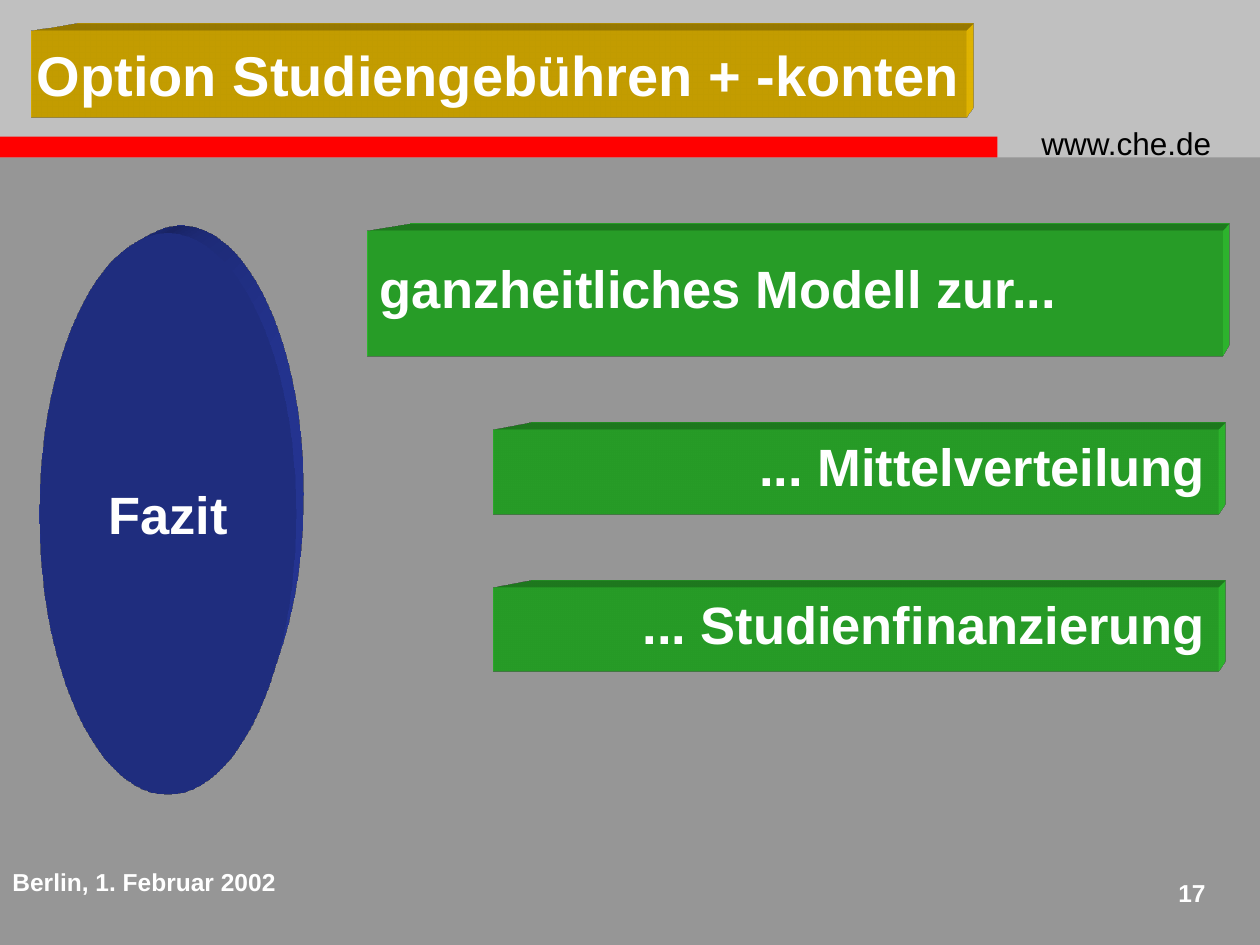
import pptx
import pptx.util
import pptx.oxml
import pptx.dml.color
import pptx.enum.shapes
import pptx.enum.text

Pt = pptx.util.Pt
Kind = pptx.enum.shapes.MSO_SHAPE
Side = pptx.enum.text.PP_ALIGN
Hold = pptx.enum.text.MSO_ANCHOR
NS = 'xmlns:a="http://schemas.openxmlformats.org/drawingml/2006/main"'


class Deck:
    """Build a slide on a grid of 120 columns and 90 rows."""

    font = "Arial"
    hues = {"back": "969696", "band": "C0C0C0", "red": "FF0000", "blue": "293BA5",
            "green": "33CC33", "gold": "FFCC00", "white": "FFFFFF", "black": "000000"}

    def __init__(self):
        self.show = pptx.Presentation()
        self.show.slide_width = pptx.util.Inches(10)
        self.show.slide_height = pptx.util.Inches(7.5)
        self.unit = self.show.slide_width / 120
        self.slide = self.show.slides.add_slide(self.show.slide_layouts[6])
        self.paint(self.slide.background.fill, "back")

    def hue(self, name):
        return pptx.dml.color.RGBColor.from_string(self.hues[name])

    def paint(self, fill, name):
        fill.solid()
        fill.fore_color.rgb = self.hue(name)

    def place(self, *cells):
        return [round(cell * self.unit) for cell in cells]

    def letter(self, shape, text, size, side=Side.LEFT, tone="white", bold=True):
        para = shape.text_frame.paragraphs[0]
        para.text = text
        para.alignment = side
        para.font.name = self.font
        para.font.size = Pt(size)
        para.font.bold = bold
        para.font.color.rgb = self.hue(tone)
        return para

    def shape(self, kind, area, name):
        shape = self.slide.shapes.add_shape(kind, *self.place(*area))
        shape.shadow.inherit = False
        shape.line.fill.background()
        self.paint(shape.fill, name)
        return shape

    def label(self, area, text, size, **look):
        box = self.slide.shapes.add_textbox(*self.place(*area))
        box.text_frame.word_wrap = True
        self.letter(box, text, size, **look)

    def block(self, kind, area, name, text, size, side=Side.CENTER, lead=None):
        shape = self.shape(kind, area, name)
        frame = shape.text_frame
        frame.word_wrap = False
        frame.vertical_anchor = Hold.MIDDLE
        self.letter(shape, text, size, side).line_spacing = lead
        for part in (
            f'<a:scene3d {NS}><a:camera prst="legacyPerspectiveTopRight"/>'
            '<a:lightRig rig="legacyFlat3" dir="b"/></a:scene3d>',
            f'<a:sp3d {NS} extrusionH="430200" prstMaterial="legacyMatte">'
            '<a:bevelT w="13500" h="13500" prst="angle"/>'
            '<a:bevelB w="13500" h="13500" prst="angle"/>'
            f'<a:extrusionClr><a:srgbClr val="{self.hues[name]}"/></a:extrusionClr></a:sp3d>',
        ):
            shape._element.spPr.append(pptx.oxml.parse_xml(part))

    def save(self):
        self.show.save("out.pptx")


def main():
    deck = Deck()
    deck.shape(Kind.RECTANGLE, (0, 0, 120, 15), "band")
    deck.shape(Kind.RECTANGLE, (0, 13, 95, 2), "red")
    deck.label((98, 11.25, 21, 4.8), "www.che.de", 18, tone="black", bold=False)
    deck.label((0, 82, 29, 6), "Berlin, 1. Februar 2002", 14)
    deck.label((109, 83, 7, 5), "17", 14, side=Side.RIGHT)
    deck.block(Kind.OVAL, (3.8, 22.2, 24.4, 53.5), "blue", "Fazit", 30)
    deck.block(Kind.RECTANGLE, (35, 22, 81.4, 12), "green",
               "ganzheitliches Modell zur...", 30, Side.LEFT, 0.75)
    for row, text in enumerate(("... Mittelverteilung", "... Studienfinanzierung")):
        deck.block(Kind.RECTANGLE, (47, 41 + 15 * row, 69, 8), "green",
                   text, 30, Side.RIGHT, 0.75)
    deck.block(Kind.RECTANGLE, (3, 3, 89, 8.2), "gold",
               "Option Studiengebühren + -konten", 32)
    deck.save()


if __name__ == "__main__":
    main()
